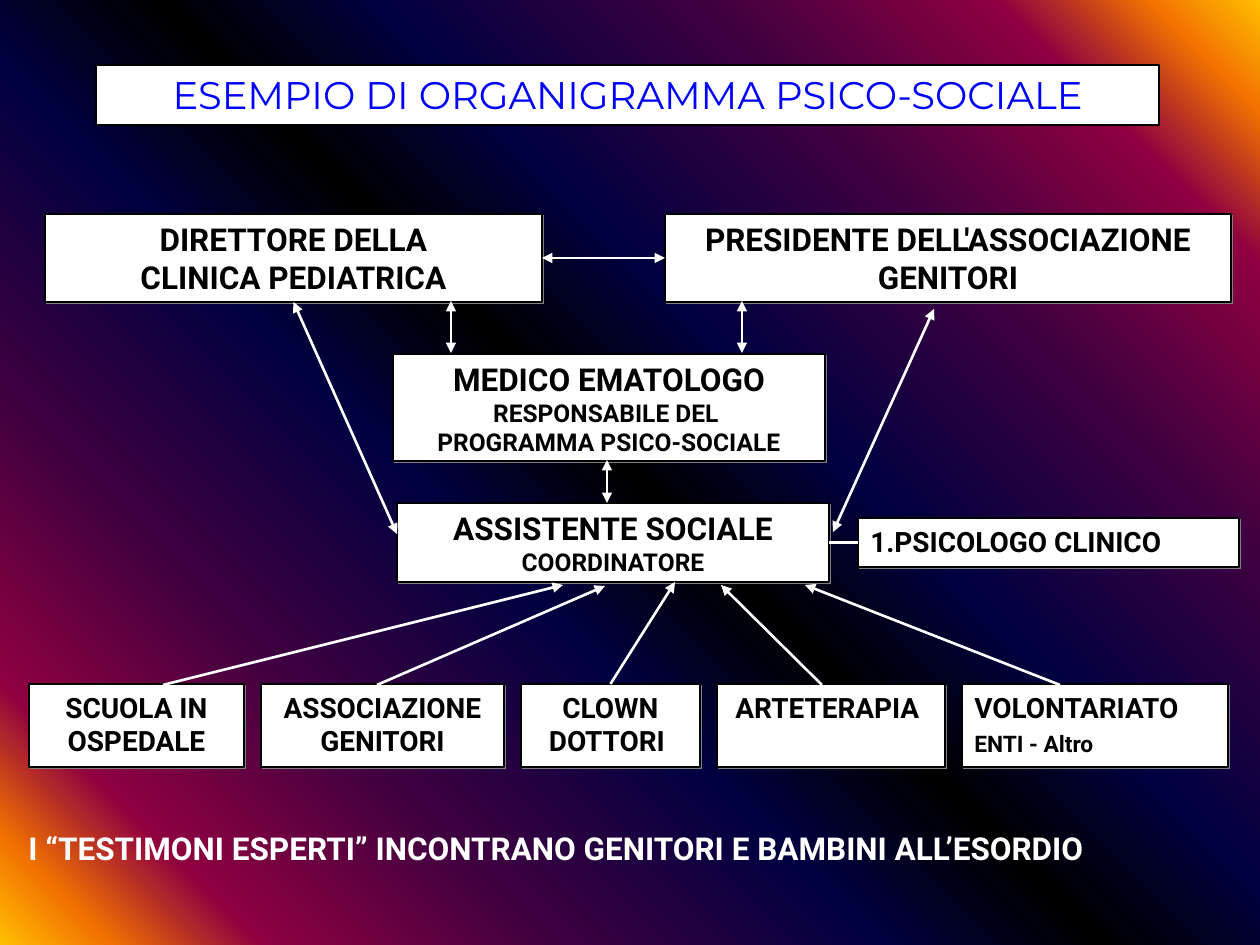
"""Build a slide with the organisation chart of a psycho-social programme."""
from lxml import etree
from pptx import Presentation
from pptx.dml.color import RGBColor
from pptx.enum.shapes import MSO_CONNECTOR, MSO_SHAPE
from pptx.enum.text import MSO_ANCHOR, MSO_AUTO_SIZE, PP_ALIGN
from pptx.oxml.ns import qn
from pptx.util import Pt

RECT = MSO_SHAPE.RECTANGLE
STRAIGHT = MSO_CONNECTOR.STRAIGHT
TOP_ANCHOR = MSO_ANCHOR.TOP
FIT_SHAPE = MSO_AUTO_SIZE.SHAPE_TO_FIT_TEXT
CENTER, LEFT_ALIGN = PP_ALIGN.CENTER, PP_ALIGN.LEFT
TOP, LEFT, BOTTOM, RIGHT = range(4)
SCALE = 914400 / 126
WHITE, BLACK, GRAY, BLUE = "FFFFFF", "000000", "808080", "0000FF"
HALF_GRADIENT = [(0, "FFBF00"), (5, "F27300"), (12, "8F0040"),
                 (25, "400040"), (40, "000040")]
GRADIENT = (HALF_GRADIENT + [(50, BLACK)]
            + [(100 - pos, color) for pos, color in reversed(HALF_GRADIENT)])


def px(value):
    """Turn px into EMU."""
    return round(value * SCALE)


def rgb(color):
    """Turn a hex string into a colour."""
    return RGBColor.from_string(color)


def add_child(parent, tag, **attributes):
    """Append an XML element with the given attributes."""
    child = etree.SubElement(parent, qn(tag))
    for name, value in attributes.items():
        child.set(name, str(value))
    return child


def set_background(slide):
    """Fill the background with the diagonal gradient."""
    fill = slide.background.fill
    fill.gradient()
    fill.gradient_angle = 45
    stop_list = slide.background._cSld.find(".//" + qn("a:gsLst"))
    for stop in list(stop_list):
        stop_list.remove(stop)
    for pos, color in GRADIENT:
        stop = add_child(stop_list, "a:gs", pos=pos * 1000)
        add_child(stop, "a:srgbClr", val=color)


def write_text(sp, lines, align=CENTER, font="Roboto", color=BLACK, bold=True):
    """Write one paragraph for each (text, size) pair."""
    tf = sp.text_frame
    tf.vertical_anchor = TOP_ANCHOR
    tf.text = "\n".join(text for text, _ in lines)
    for p, (_, size) in zip(tf.paragraphs, lines):
        p.alignment = align
        for r in p.runs:
            r.font.name = font
            r.font.size = Pt(size)
            r.font.bold = bold
            r.font.color.rgb = rgb(color)


def add_box(slide, x, y, w, h, lines, shadow=True, **style):
    """Add a white outlined box with text."""
    sp = slide.shapes.add_shape(RECT, px(x), px(y), px(w), px(h))
    sp.shadow.inherit = False
    sp.fill.solid()
    sp.fill.fore_color.rgb = rgb(WHITE)
    sp.line.color.rgb = rgb(BLACK)
    sp.line.width = Pt(0.75)
    sp.text_frame.word_wrap = True
    if shadow:
        effects = sp._element.spPr.find(qn("a:effectLst"))
        outer = add_child(effects, "a:outerShdw", dist=Pt(1.4), dir=2700000,
                          algn="ctr", rotWithShape=0)
        add_child(outer, "a:srgbClr", val=GRAY)
    write_text(sp, lines, **style)
    return sp


def add_line(slide, start, end, heads=()):
    """Join two ends, each a px point or a (shape, side) pair."""
    points = [(0, 0) if hasattr(e[0], "shape_id") else e for e in (start, end)]
    line = slide.shapes.add_connector(
        STRAIGHT, *(px(v) for point in points for v in point))
    if hasattr(start[0], "shape_id"):
        line.begin_connect(*start)
    if hasattr(end[0], "shape_id"):
        line.end_connect(*end)
    line.line.color.rgb = rgb(WHITE)
    line.line.width = Pt(1.5)
    for head in heads:
        add_child(line.line._get_or_add_ln(), head, type="triangle")
    add_child(line._element.spPr, "a:effectLst")


def add_row(slide, x, y, h, gap, boxes):
    """Add boxes side by side with equal gaps."""
    row = []
    for w, lines, align in boxes:
        row.append(add_box(slide, x, y, w, h, lines, align=align))
        x += w + gap
    return row


def add_note(slide, x, y, w, h, text):
    """Add the closing line of white text."""
    sp = slide.shapes.add_textbox(px(x), px(y), px(w), px(h))
    sp.text_frame.word_wrap = False
    sp.text_frame.auto_size = FIT_SHAPE
    write_text(sp, [(text, 18)], align=LEFT_ALIGN, color=WHITE)


def main():
    """Build and save the slide."""
    prs = Presentation()
    prs.slide_width, prs.slide_height = px(1260), px(945)
    slide = prs.slides.add_slide(prs.slide_layouts[6])
    set_background(slide)

    add_box(slide, 96, 65, 1063, 60,
            [("ESEMPIO DI ORGANIGRAMMA PSICO-SOCIALE", 22)],
            shadow=False, font="Montserrat", color=BLUE, bold=False)
    director = add_box(slide, 45, 214, 497, 88,
                       [("DIRETTORE DELLA", 18), ("CLINICA PEDIATRICA", 18)])
    president = add_box(slide, 665, 214, 566, 88,
                        [("PRESIDENTE DELL'ASSOCIAZIONE GENITORI", 18)])
    add_box(slide, 393, 354, 432, 107,
            [("MEDICO EMATOLOGO", 18), ("RESPONSABILE DEL ", 14),
             ("PROGRAMMA PSICO-SOCIALE", 14)])
    assistant = add_box(slide, 397, 503, 432, 79,
                        [("ASSISTENTE SOCIALE", 18), ("COORDINATORE", 14)])
    psychologist = add_box(slide, 858, 518, 381, 49,
                           [("1.PSICOLOGO CLINICO", 16)], align=LEFT_ALIGN)
    helpers = add_row(slide, 29, 684, 83, 17, [
        (215, [("SCUOLA IN", 16), ("OSPEDALE", 16)], CENTER),
        (243, [("ASSOCIAZIONE GENITORI", 16)], CENTER),
        (179, [("CLOWN", 16), ("DOTTORI ", 16)], CENTER),
        (228, [("ARTETERAPIA ", 16)], CENTER),
        (266, [("VOLONTARIATO", 16), ("ENTI - Altro", 13)], LEFT_ALIGN),
    ])
    clowns, volunteers = helpers[2], helpers[4]
    volunteers.text_frame.paragraphs[1].space_before = Pt(3.2)

    for start, end in [
        ((451, 301), (451, 353)),
        ((742, 301), (742, 353)),
        ((607, 460), (607, 503)),
        ((director, RIGHT), (president, LEFT)),
        ((397, 534), (director, BOTTOM)),
        ((833, 532), (934, 309)),
    ]:
        add_line(slide, start, end, ("a:headEnd", "a:tailEnd"))
    for start, end in [
        ((163, 685), (563, 585)),
        ((377, 685), (605, 586)),
        ((clowns, TOP), (675, 582)),
        ((822, 685), (721, 585)),
        ((1060, 685), (805, 585)),
    ]:
        add_line(slide, start, end, ("a:tailEnd",))
    add_line(slide, (assistant, RIGHT), (psychologist, LEFT))

    add_note(slide, 16, 823, 1229, 50,
             "I “TESTIMONI ESPERTI” INCONTRANO GENITORI E BAMBINI ALL’ESORDIO")
    prs.save("out.pptx")


if __name__ == "__main__":
    main()
